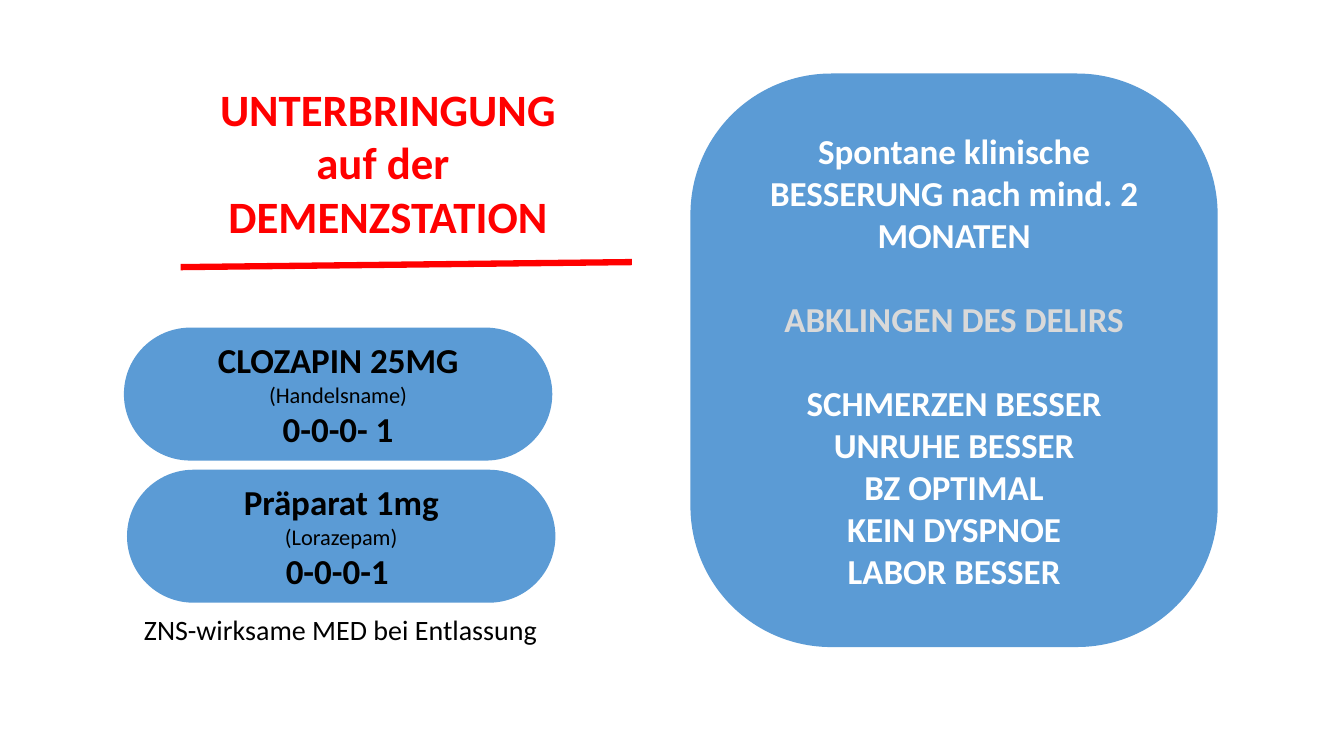
from dataclasses import dataclass

from lxml import etree
from pptx import Presentation
from pptx.dml.color import RGBColor
from pptx.enum.shapes import MSO_CONNECTOR, MSO_SHAPE
from pptx.enum.text import MSO_ANCHOR, MSO_AUTO_SIZE, PP_ALIGN
from pptx.oxml.ns import qn
from pptx.slide import Slide
from pptx.text.text import TextFrame
from pptx.util import Pt

ROUNDED = MSO_SHAPE.ROUNDED_RECTANGLE
STRAIGHT = MSO_CONNECTOR.STRAIGHT
CENTER = PP_ALIGN.CENTER
MIDDLE = MSO_ANCHOR.MIDDLE
NO_AUTOFIT = MSO_AUTO_SIZE.NONE

FONT = "Calibri"
COLORS = {
    "blue": "5B9BD5",
    "red": "FF0000",
    "black": "000000",
    "white": "FFFFFF",
    "grey": "D9D9D9",
}
PANEL_GAP = 30


@dataclass
class Line:
    text: str
    size: float = 25
    color: str = "black"
    bold: bool = True
    before: float = 0


@dataclass
class Box:
    left: float
    top: float
    width: float
    height: float
    radius: float
    lines: list[Line]


def medication(left: float, top: float, name: str, alias: str, dose: str) -> Box:
    lines = [Line(name), Line(f"({alias})", size=16, bold=False), Line(dose)]
    return Box(left, top, 306, 95, 0.5, lines)


TITLE = ["UNTERBRINGUNG", "auf der ", "DEMENZSTATION"]
OUTCOMES = ["UNRUHE BESSER", "BZ OPTIMAL", "KEIN DYSPNOE", "LABOR BESSER"]
BOXES = [
    medication(88.5, 234, "CLOZAPIN 25MG", "Handelsname", "0-0-0- 1"),
    medication(90.7, 335.5, "Präparat 1mg", "Lorazepam", "0-0-0-1 "),
    Box(493.2, 52.5, 376.6, 409.7, 0.267, [
        Line("Spontane klinische BESSERUNG nach mind. 2 MONATEN", color="white"),
        Line("ABKLINGEN DES DELIRS", color="grey", before=PANEL_GAP),
        Line("SCHMERZEN BESSER", color="white", before=PANEL_GAP),
        *[Line(text, color="white") for text in OUTCOMES],
    ]),
]


def rgb(name: str) -> RGBColor:
    return RGBColor.from_string(COLORS[name])


def add_text(tf: TextFrame, text: str, *, size: float = 25, color: str = "black",
             bold: bool = True, before: float = 0) -> None:
    """Fill the empty first paragraph, or append another one."""
    p = tf.paragraphs[0] if not tf.text else tf.add_paragraph()
    p.alignment = CENTER
    p.line_spacing = 1.0
    p.space_before = Pt(before)
    r = p.add_run()
    r.text = text
    r.font.name = FONT
    r.font.size = Pt(size)
    r.font.bold = bold
    r.font.color.rgb = rgb(color)


def write_lines(tf: TextFrame, lines: list[Line]) -> None:
    tf.word_wrap = True
    tf.auto_size = NO_AUTOFIT
    tf.vertical_anchor = MIDDLE
    for line in lines:
        add_text(tf, line.text, size=line.size, color=line.color,
                 bold=line.bold, before=line.before)


def set_title(s: Slide) -> None:
    title = s.shapes.title
    title.left, title.top = Pt(103.7), Pt(52.6)
    title.width, title.height = Pt(347), Pt(126)
    write_lines(title.text_frame, [Line(text, size=32, color="red") for text in TITLE])


def add_box(s: Slide, box: Box) -> None:
    sp = s.shapes.add_shape(ROUNDED, Pt(box.left), Pt(box.top),
                            Pt(box.width), Pt(box.height))
    sp.adjustments[0] = box.radius
    sp.shadow.inherit = False
    sp.fill.solid()
    sp.fill.fore_color.rgb = rgb("blue")
    sp.line.fill.background()
    write_lines(sp.text_frame, box.lines)


def add_caption(s: Slide) -> None:
    sp = s.shapes.add_textbox(Pt(28.8), Pt(395.3), Pt(429), Pt(108.7))
    write_lines(sp.text_frame,
                [Line("ZNS-wirksame MED bei Entlassung", size=20, bold=False)])


def add_underline(s: Slide) -> None:
    line = s.shapes.add_connector(STRAIGHT, Pt(129), Pt(190.8), Pt(451.4), Pt(187.2))
    line.line.color.rgb = rgb("red")
    line.line.width = Pt(4.5)
    etree.SubElement(line._element.spPr, qn("a:effectLst"))


def main() -> None:
    prs = Presentation()
    prs.slide_width, prs.slide_height = Pt(960), Pt(540)
    s = prs.slides.add_slide(prs.slide_layouts[5])
    set_title(s)
    for box in BOXES:
        add_box(s, box)
    add_caption(s)
    add_underline(s)
    prs.save("out.pptx")


if __name__ == "__main__":
    main()
